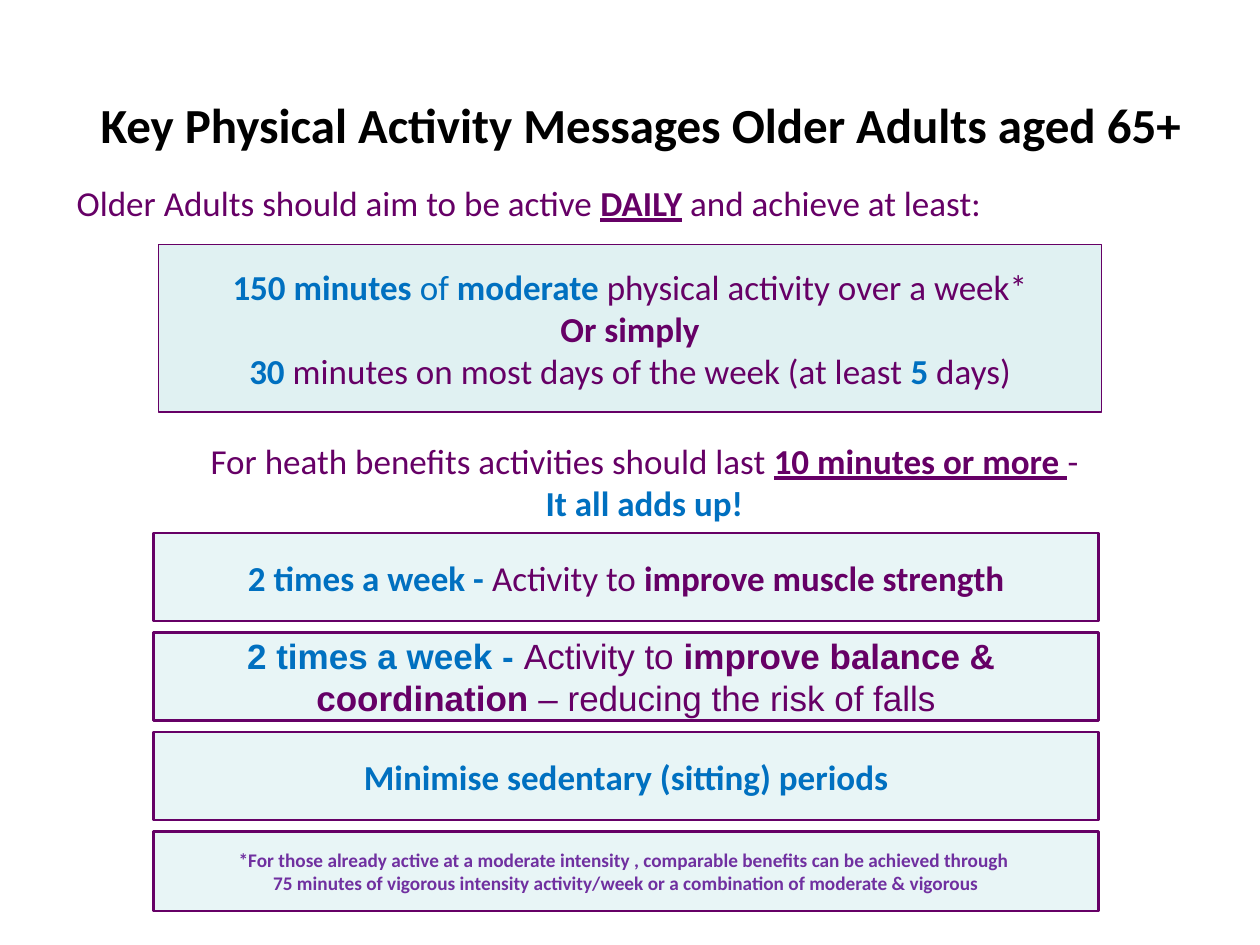
from typing import NamedTuple

from pptx import Presentation
from pptx.dml.color import RGBColor
from pptx.enum.shapes import MSO_SHAPE
from pptx.enum.text import MSO_ANCHOR, MSO_AUTO_SIZE, PP_ALIGN
from pptx.util import Pt

SCALE = 9144
PLUM, BLUE, VIOLET, BLACK = "660066", "0070C0", "7030A0", "000000"
MINT, PALE = "E0F1F2", "E8F5F6"


class Span(NamedTuple):
    text: str
    hue: str = PLUM
    bold: bool = False
    under: bool = False


class Area(NamedTuple):
    left: int
    top: int
    width: int
    height: int


class Panel(NamedTuple):
    area: Area
    lines: list[list[Span]]
    fill: str = PALE
    line: float = 1.5
    size: int = 20
    face: str = "Calibri"


def px(count: int) -> int:
    """Turn px into EMU."""
    return count * SCALE


def color(code: str) -> RGBColor:
    """Turn a hex string into a colour."""
    return RGBColor.from_string(code)


def write(frame, lines: list[list[Span]], size: int = 20,
          face: str = "Calibri", align=PP_ALIGN.CENTER) -> None:
    """Fill a text frame with lines of styled spans."""
    for index, spans in enumerate(lines):
        para = frame.add_paragraph() if index else frame.paragraphs[0]
        para.alignment = align
        for span in spans:
            run = para.add_run()
            run.text = span.text
            font = run.font
            font.name, font.size = face, Pt(size)
            font.bold, font.underline = span.bold, span.under
            font.color.rgb = color(span.hue)


def draw_panel(slide, panel: Panel) -> None:
    """Draw a framed box with centred text."""
    box = slide.shapes.add_shape(MSO_SHAPE.RECTANGLE, *map(px, panel.area))
    box.shadow.inherit = False
    box.fill.solid()
    box.fill.fore_color.rgb = color(panel.fill)
    box.line.color.rgb = color(PLUM)
    box.line.width = Pt(panel.line)
    frame = box.text_frame
    frame.word_wrap = False
    frame.vertical_anchor = MSO_ANCHOR.MIDDLE
    write(frame, panel.lines, panel.size, panel.face)


def draw_note(slide, area: Area, lines: list[list[Span]], align) -> None:
    """Draw a plain text box."""
    frame = slide.shapes.add_textbox(*map(px, area)).text_frame
    frame.word_wrap = True
    frame.auto_size = MSO_AUTO_SIZE.SHAPE_TO_FIT_TEXT
    write(frame, lines, align=align)


def draw_title(slide, area: Area, text: str) -> None:
    """Place and style the slide title."""
    title = slide.shapes.title
    title.left, title.top, title.width, title.height = map(px, area)
    frame = title.text_frame
    frame.vertical_anchor = MSO_ANCHOR.MIDDLE
    write(frame, [[Span(text, BLACK, True)]], 28)


def row(index: int, height: int = 70) -> Area:
    """Give the area of a box in the lower stack."""
    return Area(122, 423 + 79 * index, 750, height)


WEEK = [
    [Span("150 minutes ", BLUE, True), Span("of ", BLUE),
     Span("moderate ", BLUE, True), Span("physical activity over a week*")],
    [Span("Or simply", bold=True)],
    [Span("30 ", BLUE, True),
     Span("minutes on most days of the week (at least "),
     Span("5 ", BLUE, True), Span("days)")],
]
TWICE = [Span("2 times a week - ", BLUE, True), Span("Activity to ")]
MUSCLE = [TWICE + [Span("improve muscle strength", bold=True)]]
BALANCE = [
    TWICE + [Span("improve balance & ", bold=True)],
    [Span("coordination ", bold=True), Span("– reducing the risk of falls")],
]
SITTING = [[Span("Minimise sedentary (sitting) periods", BLUE, True)]]
FOOTNOTE = [
    [Span("*For those already active at a moderate intensity , "
          "comparable benefits can be achieved through ", VIOLET, True)],
    [Span("75 minutes of vigorous intensity activity/week "
          "or a combination of moderate & vigorous", VIOLET, True)],
]
PANELS = [
    Panel(Area(126, 194, 748, 133), WEEK, MINT, 0.75),
    Panel(row(0), MUSCLE),
    Panel(row(1), BALANCE, face="Arial"),
    Panel(row(2), SITTING),
    Panel(row(3, 63), FOOTNOTE, size=11),
]
DAILY = [[Span("Older Adults should aim to be active "),
          Span("DAILY", bold=True, under=True),
          Span(" and achieve at least:")]]
ADDS = [
    [Span("For heath benefits activities should last "),
     Span("10 minutes or more ", bold=True, under=True), Span("-")],
    [Span("It all adds up!", BLUE, True)],
]


def main() -> None:
    """Build and save the slide."""
    deck = Presentation()
    deck.slide_width, deck.slide_height = px(1000), px(750)
    slide = deck.slides.add_slide(deck.slide_layouts[5])
    draw_title(slide, Area(17, 62, 983, 72),
               "Key Physical Activity Messages Older Adults aged 65+")
    draw_note(slide, Area(51, 139, 921, 44), DAILY, PP_ALIGN.LEFT)
    draw_note(slide, Area(51, 344, 921, 77), ADDS, PP_ALIGN.CENTER)
    for panel in PANELS:
        draw_panel(slide, panel)
    deck.save("out.pptx")


if __name__ == "__main__":
    main()
